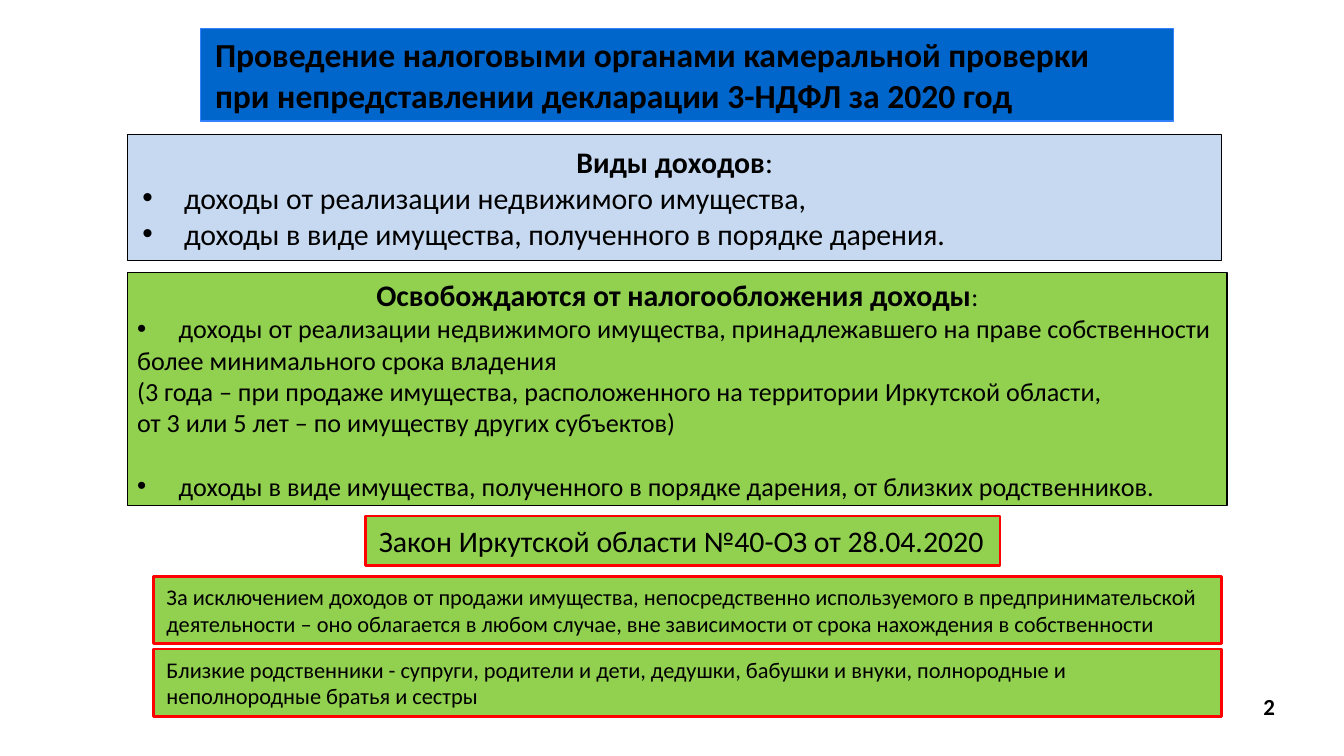
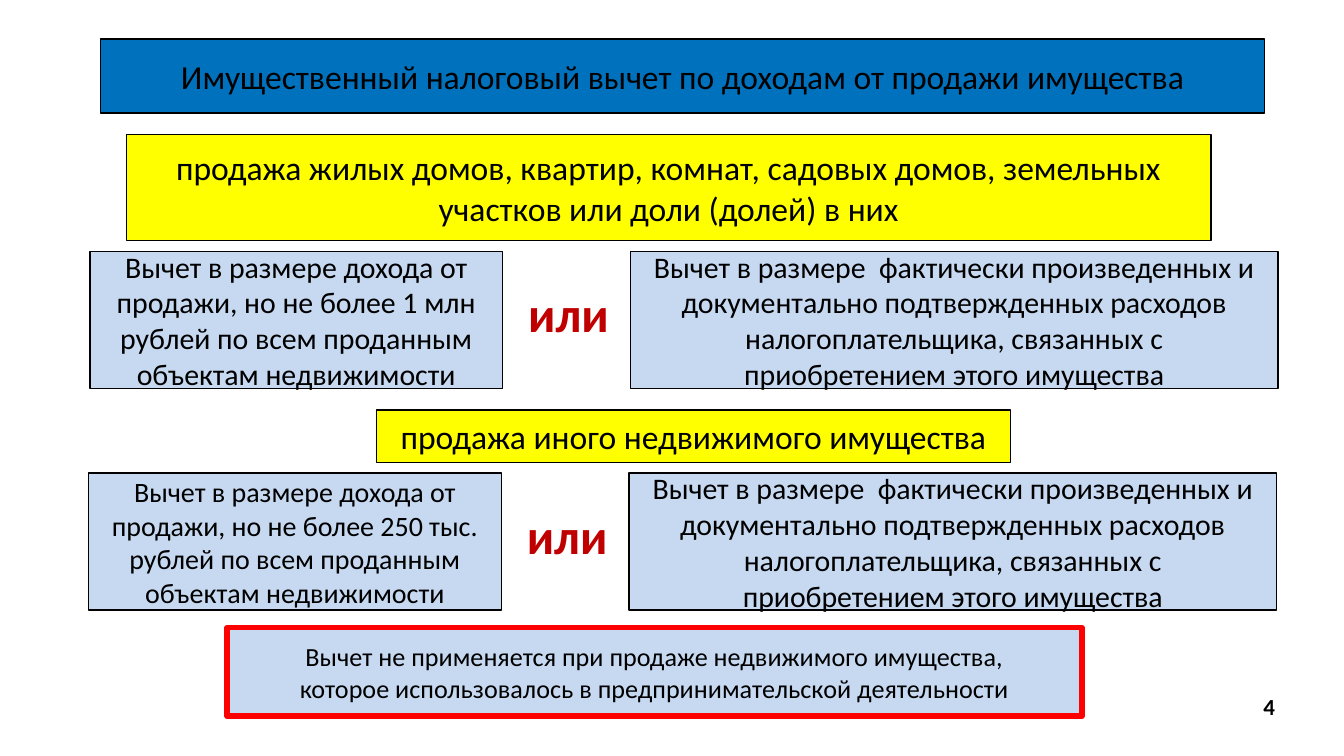
from pptx import Presentation
from pptx.dml.color import RGBColor
from pptx.enum.shapes import MSO_SHAPE as Shape
from pptx.enum.text import MSO_ANCHOR as Anchor, MSO_AUTO_SIZE as AutoSize, PP_ALIGN as Align
from pptx.oxml.ns import qn
from pptx.util import Inches, Pt

COLORS = {
    "text": "000000",
    "edge": "000000",
    "title_bright": "0066CC",
    "title_edge": "3381FF",
    "title_deep": "0072BD",
    "income": "C6D9F1",
    "exempt": "92D050",
    "sale": "FFFF00",
    "warning": "FF0000",
    "choice": "C00000",
}
FONT = "Calibri"
BULLET_INDENT = 0.31
WIDE_INSETS = (0.11, 0.06)
TIGHT_INSETS = (0.07, 0.06)
NOTE_INSETS = (0.1, 0.05)
NUMBER_INSETS = (0.09, 0.04)
EXPENSES = (
    "Вычет в размере  фактически произведенных и документально подтвержденных "
    "расходов налогоплательщика, связанных с приобретением этого имущества"
)


def rgb(name):
    return RGBColor.from_string(COLORS[name])


def place(box, left, top, width, height):
    box.left, box.top = Inches(left), Inches(top)
    box.width, box.height = Inches(width), Inches(height)


def paint(box, fill, edge="edge", weight=0.75):
    box.fill.solid()
    box.fill.fore_color.rgb = rgb(fill)
    box.line.color.rgb = rgb(edge)
    box.line.width = Pt(weight)


def set_frame(box, insets=WIDE_INSETS, anchor=Anchor.MIDDLE, wrap=True):
    frame = box.text_frame
    frame.auto_size = AutoSize.NONE
    frame.word_wrap = wrap
    frame.vertical_anchor = anchor
    frame.margin_left = frame.margin_right = Inches(insets[0])
    frame.margin_top = frame.margin_bottom = Inches(insets[1])
    return frame


def next_paragraph(frame):
    first = frame.paragraphs[0]
    return frame.add_paragraph() if first.runs else first


def style(para, size, align=Align.LEFT, bold=False, color="text"):
    para.alignment = align
    para.font.name = FONT
    para.font.size = Pt(size)
    para.font.bold = bold
    para.font.color.rgb = rgb(color)


def write(frame, lines, size, align=Align.CENTER, bold=False, color="text"):
    for line in lines:
        para = next_paragraph(frame)
        para.add_run().text = line
        style(para, size, align, bold, color)


def set_title(page, lines, at, fill, edge="edge", align=Align.CENTER, bold=False):
    title = page.shapes.title
    place(title, *at)
    paint(title, fill, edge)
    write(set_frame(title), lines, 18, align, bold)


def set_marker(para, indent, tag, **attributes):
    properties = para._p.get_or_add_pPr()
    properties.set("marL", str(Inches(indent)))
    properties.set("indent", str(-Inches(indent)))
    properties.append(properties.makeelement(qn(f"a:{tag}"), attributes))


def add_heading(frame, text, colon_size):
    para = next_paragraph(frame)
    para.add_run().text = text
    colon = para.add_run()
    colon.text = ":"
    colon.font.bold = False
    colon.font.size = Pt(colon_size)
    para.space_before = Pt(0)
    set_marker(para, 0, "buNone")
    style(para, 16, Align.CENTER, True)


def add_item(frame, text, size, bullet=True, gap=0):
    para = next_paragraph(frame)
    para.add_run().text = text
    para.space_before = Pt(gap)
    if bullet:
        set_marker(para, BULLET_INDENT, "buChar", char="•")
    else:
        set_marker(para, 0, "buNone")
    style(para, size)


def set_list(body, at, fill, insets=WIDE_INSETS):
    place(body, *at)
    paint(body, fill)
    return set_frame(body, insets)


def add_box(page, lines, at, fill, size=16, edge="edge", weight=0.75):
    box = page.shapes.add_shape(Shape.RECTANGLE, *map(Inches, at))
    box.shadow.inherit = False
    paint(box, fill, edge, weight)
    write(set_frame(box), lines, size)


def add_note(page, text, at, size=12):
    box = page.shapes.add_shape(Shape.RECTANGLE, *map(Inches, at))
    box.shadow.inherit = False
    paint(box, "exempt", "warning", 1.5)
    write(set_frame(box, NOTE_INSETS, Anchor.TOP), [text], size, Align.LEFT)


def add_choice(page, left, top):
    box = page.shapes.add_textbox(*map(Inches, (left, top, 0.63, 0.48)))
    frame = set_frame(box, wrap=False)
    write(frame, ["или"], 26.4, Align.LEFT, True, "choice")
    frame.paragraphs[0].line_spacing = 0.8


def add_number(page, number):
    box = page.shapes.add_textbox(*map(Inches, (9.31, 5.12, 0.4, 0.27)))
    write(set_frame(box, NUMBER_INSETS), [number], 12.3, Align.LEFT, True)


def add_deductions(page, limit, left, top, limit_size):
    add_box(page, [limit], (left, top, 3.07, 1.02), "income", limit_size)
    add_choice(page, left + 3.15, top + 0.26)
    add_box(page, [EXPENSES], (left + 4.02, top, 4.82, 1.02), "income")


def build_audit_page(deck):
    page = deck.slides.add_slide(deck.slide_layouts.get_by_name("Two Content"))
    add_number(page, "2")
    set_title(
        page,
        ["Проведение налоговыми органами камеральной проверки",
         "при непредставлении декларации 3-НДФЛ за 2020 год"],
        (1.49, 0.21, 7.24, 0.69), "title_bright", "title_edge", Align.LEFT, True,
    )
    income = set_list(page.placeholders[1], (0.95, 1, 8.14, 0.94), "income")
    add_heading(income, "Виды доходов", 16)
    add_item(income, "доходы от реализации недвижимого имущества,", 16)
    add_item(income, "доходы в виде имущества, полученного в порядке дарения.", 16)

    exempt = set_list(page.placeholders[2], (0.95, 2.03, 8.18, 1.73), "exempt", TIGHT_INSETS)
    add_heading(exempt, "Освобождаются от налогообложения доходы", 14)
    add_item(exempt, "доходы от реализации недвижимого имущества, "
                     "принадлежавшего на праве собственности", 14)
    for line in (
        "более минимального срока владения",
        "(3 года – при продаже имущества, расположенного на территории Иркутской области,",
        "от 3 или 5 лет – по имуществу других субъектов)",
    ):
        add_item(exempt, line, 14, bullet=False)
    add_item(exempt, "доходы в виде имущества, полученного в порядке дарения, "
                     "от близких родственников.", 14, gap=17)

    add_note(page, "Закон Иркутской области №40-ОЗ от 28.04.2020", (2.72, 3.84, 4.72, 0.37), 16)
    notes = (
        "За исключением доходов от продажи имущества, непосредственно используемого "
        "в предпринимательской деятельности – оно облагается в любом случае, "
        "вне зависимости от срока нахождения в собственности",
        "Близкие родственники - супруги, родители и дети, дедушки, бабушки и внуки, "
        "полнородные и неполнородные братья и сестры",
    )
    for row, note in enumerate(notes):
        add_note(page, note, (1.14, 4.29 + 0.54 * row, 7.95, 0.5))


def build_deduction_page(deck):
    page = deck.slides.add_slide(deck.slide_layouts.get_by_name("Title Only"))
    add_number(page, "4")
    set_title(page, ["Имущественный налоговый вычет по доходам от продажи имущества"],
              (0.75, 0.29, 8.66, 0.55), "title_deep")
    add_box(page, ["продажа жилых домов, квартир, комнат, садовых домов, "
                   "земельных участков или доли (долей) в них"],
            (0.94, 1, 8.07, 0.79), "sale", 18)
    add_deductions(page, "Вычет в размере дохода от продажи, но не более 1 млн рублей "
                         "по всем проданным объектам недвижимости", 0.67, 1.87, 16)
    add_box(page, ["продажа иного недвижимого имущества"], (2.8, 3.05, 4.72, 0.39), "sale", 18)
    add_deductions(page, "Вычет в размере дохода от продажи, но не более 250 тыс. рублей "
                         "по всем проданным объектам недвижимости", 0.66, 3.52, 15)
    add_box(page, ["Вычет не применяется при продаже недвижимого имущества,",
                   "которое использовалось в предпринимательской деятельности"],
            (1.69, 4.67, 6.36, 0.66), "income", 14, "warning", 3)


def main():
    deck = Presentation()
    deck.slide_width = Inches(10)
    deck.slide_height = deck.slide_width * 9 // 16
    build_audit_page(deck)
    build_deduction_page(deck)
    deck.save("out.pptx")


if __name__ == "__main__":
    main()
